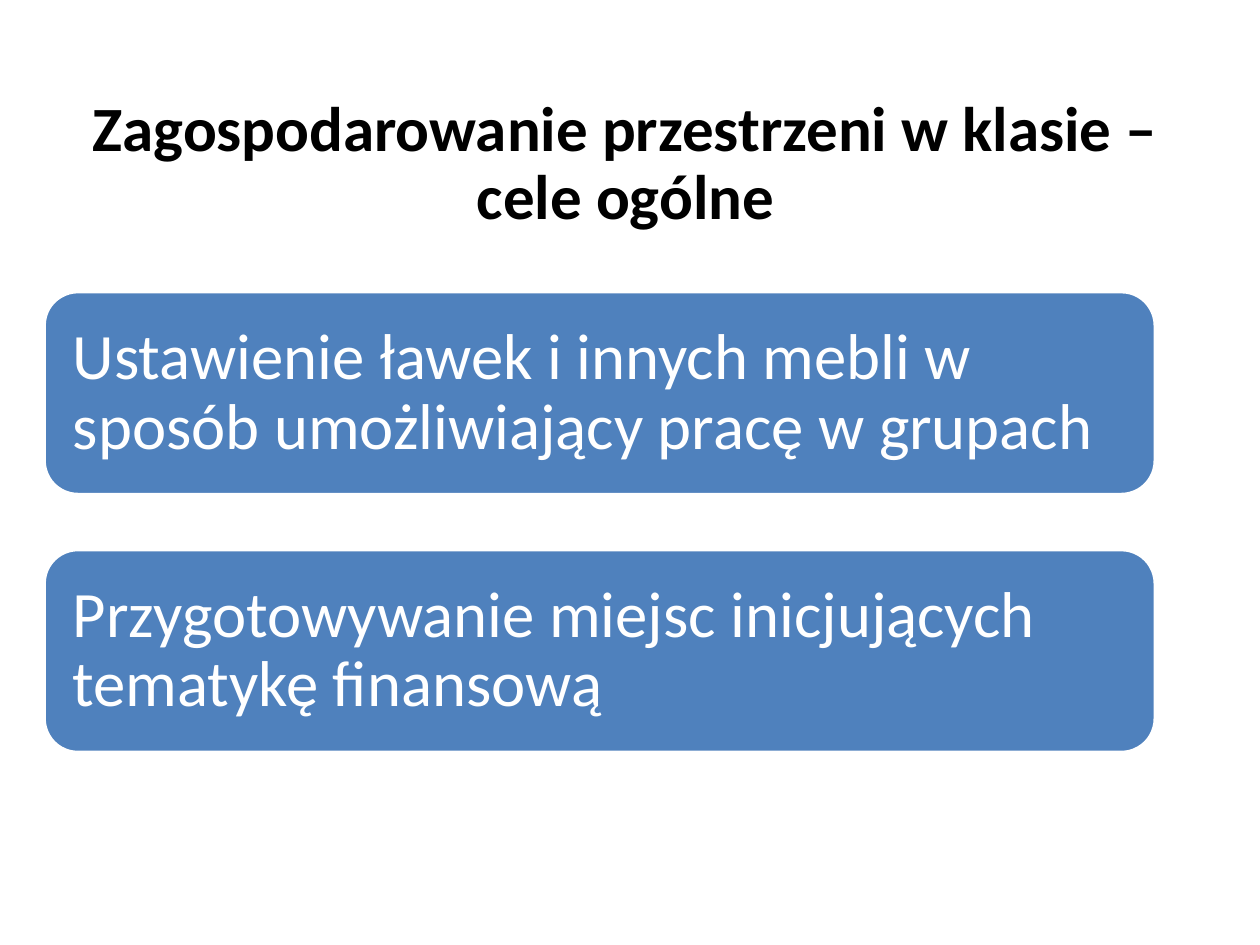
from pptx import Presentation
from pptx.dml.color import RGBColor
from pptx.enum.shapes import MSO_SHAPE
from pptx.enum.text import MSO_ANCHOR, MSO_AUTO_SIZE, PP_ALIGN
from pptx.util import Cm, Pt

COLORS = {"card": "4F81BD", "white": "FFFFFF", "title": "000000"}
GOALS = [
    "Ustawienie ławek i innych mebli w sposób umożliwiający pracę w grupach",
    "Przygotowywanie miejsc inicjujących tematykę finansową",
]
CARD_LEFT, CARD_TOP = 0.89, 5.88
CARD_WIDTH, CARD_HEIGHT = 22.4, 4.09
CARD_STEP = 5.2


def write_text(shape, text, size, color, align, bold=False):
    frame = shape.text_frame
    frame.text = text
    frame.word_wrap = True
    frame.auto_size = MSO_AUTO_SIZE.NONE
    frame.vertical_anchor = MSO_ANCHOR.MIDDLE
    paragraph = frame.paragraphs[0]
    paragraph.alignment = align
    paragraph.line_spacing = 0.9
    font = paragraph.runs[0].font
    font.name = "Calibri"
    font.size = Pt(size)
    font.bold = bold
    font.color.rgb = RGBColor.from_string(COLORS[color])


presentation = Presentation()
presentation.slide_width, presentation.slide_height = Cm(25.4), Cm(19.05)
slide = presentation.slides.add_slide(presentation.slide_layouts[5])

title = slide.shapes.title
title.left, title.top = Cm(0.51), Cm(1.73)
title.width, title.height = Cm(24.2), Cm(3.18)
write_text(title, "Zagospodarowanie przestrzeni w klasie – cele ogólne",
           36, "title", PP_ALIGN.CENTER, bold=True)

for index, goal in enumerate(GOALS):
    card = slide.shapes.add_shape(
        MSO_SHAPE.ROUNDED_RECTANGLE, Cm(CARD_LEFT), Cm(CARD_TOP + index * CARD_STEP),
        Cm(CARD_WIDTH), Cm(CARD_HEIGHT))
    card.shadow.inherit = False
    card.fill.solid()
    card.fill.fore_color.rgb = RGBColor.from_string(COLORS["card"])
    card.line.color.rgb = RGBColor.from_string(COLORS["white"])
    card.line.width = Pt(2)
    frame = card.text_frame
    frame.margin_left = frame.margin_right = Cm(0.38)
    frame.margin_top = frame.margin_bottom = Cm(0.38)
    write_text(card, goal, 37, "white", PP_ALIGN.LEFT)

presentation.save("out.pptx")
